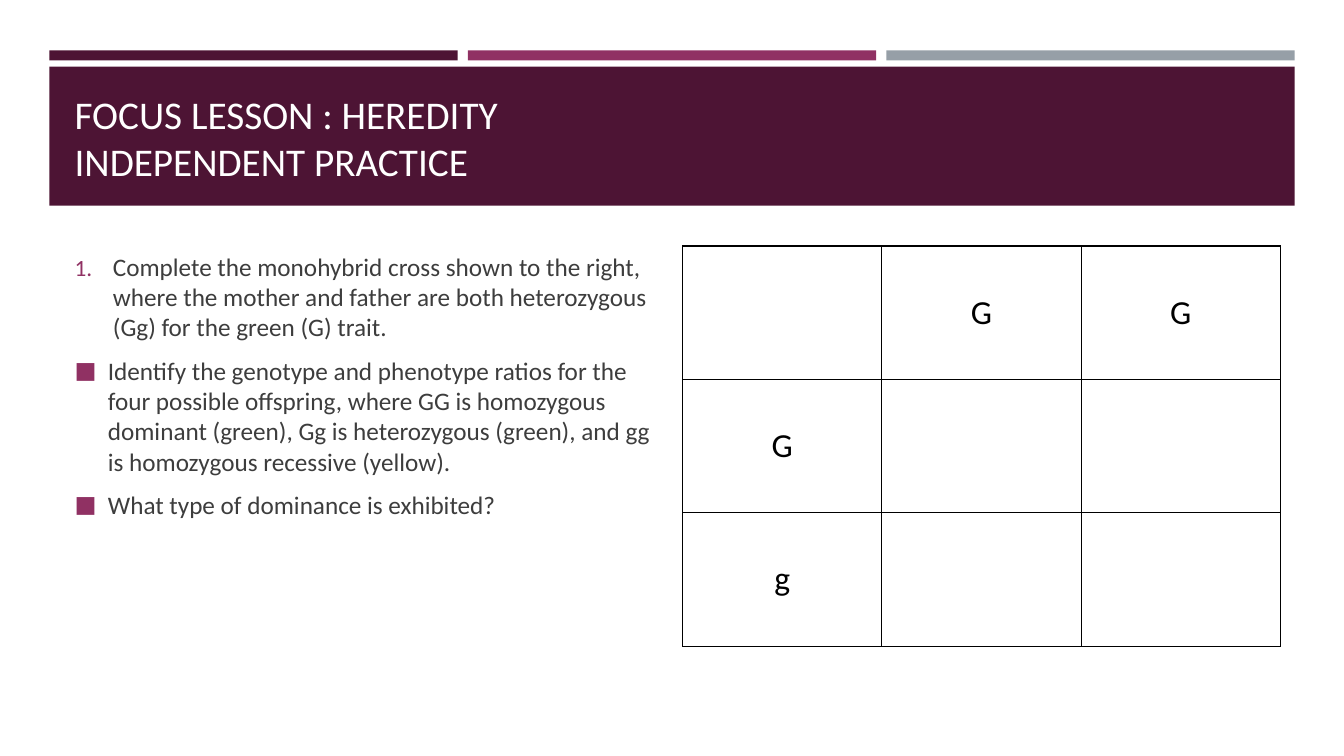
import pptx
import pptx.dml.color
import pptx.enum.shapes
import pptx.enum.text
import pptx.oxml
import pptx.oxml.ns
import pptx.util

# Content
TITLE = "FOCUS LESSON : HEREDITY\vINDEPENDENT PRACTICE"
NUMBERED = ("buAutoNum", "type", "arabicPeriod", 0.38)
SQUARE = ("buChar", "char", "■", 0.33)
TASKS = [
    (NUMBERED, "Complete the monohybrid cross shown to the right, where the mother "
               "and father are both heterozygous (Gg) for the green (G) trait."),
    (SQUARE, "Identify the genotype and phenotype ratios for the four possible "
             "offspring, where GG is homozygous dominant (green), Gg is heterozygous "
             "(green), and gg is homozygous recessive (yellow)."),
    (SQUARE, "What type of dominance is exhibited?"),
]
PUNNETT_SQUARE = [["", "G", "G"], ["G", "", ""], ["g", "", ""]]

# Colours and layout, in inches
PLUM, MAGENTA, GREY = "4D1434", "903163", "969FA7"
WHITE, BLACK, TEXT_COLOUR = "FFFFFF", "000000", "3D3D3D"
WIDTH, HEIGHT = 13.33, 7.5
MARGIN, BAR_WIDTH, BAR_GAP = 0.49, 4.05, 0.1
CONTENT_LEFT, CONTENT_TOP = 0.64, 2.44
COLUMN_WIDTH, COLUMN_HEIGHT, COLUMN_GAP = 5.93, 3.97, 0.2

ANCHOR = pptx.enum.text.MSO_ANCHOR
ALIGN = pptx.enum.text.PP_ALIGN
inches, points = pptx.util.Inches, pptx.util.Pt


def colour(value):
    return pptx.dml.color.RGBColor.from_string(value)


def set_format(target, values):
    for name, value in values.items():
        setattr(target, name, value)


def place(shape, left, top, width, height):
    set_format(shape, {"left": inches(left), "top": inches(top),
                       "width": inches(width), "height": inches(height)})


def set_font(paragraph, size, value):
    set_format(paragraph.font, {"name": "Calibri", "size": points(size), "bold": False})
    paragraph.font.color.rgb = colour(value)


def append_xml(parent, markup):
    parent.append(pptx.oxml.parse_xml(markup.replace(
        " ", " " + pptx.oxml.ns.nsdecls("a") + " ", 1)))


def add_band(left, top, width, height, fill):
    band = slide.shapes.add_shape(
        pptx.enum.shapes.MSO_SHAPE.RECTANGLE,
        inches(left), inches(top), inches(width), inches(height))
    band.shadow.inherit = False
    band.fill.solid()
    band.fill.fore_color.rgb = colour(fill)
    band.line.fill.background()
    # Bands lie behind the placeholders
    slide.shapes._spTree.remove(band._element)
    slide.shapes._spTree.insert(2, band._element)


presentation = pptx.Presentation()
set_format(presentation, {"slide_width": inches(WIDTH), "slide_height": inches(HEIGHT)})
slide = presentation.slides.add_slide(presentation.slide_layouts[1])

# Header bands
for index, fill in enumerate([PLUM, MAGENTA, GREY]):
    add_band(MARGIN + index * (BAR_WIDTH + BAR_GAP), 0.5, BAR_WIDTH, 0.1, fill)
add_band(MARGIN, 0.66, 3 * BAR_WIDTH + 2 * BAR_GAP, 1.38, PLUM)

# Title
title = slide.shapes.title
place(title, CONTENT_LEFT, 0.8, 2 * COLUMN_WIDTH + COLUMN_GAP, 1.08)
title.text_frame.text = TITLE
frame_format = {"word_wrap": True, "auto_size": pptx.enum.text.MSO_AUTO_SIZE.NONE}
set_format(title.text_frame, {**frame_format, "vertical_anchor": ANCHOR.BOTTOM})
title.text_frame.paragraphs[0].alignment = ALIGN.LEFT
set_font(title.text_frame.paragraphs[0], 28, WHITE)

# Task list
body = slide.placeholders[1]
place(body, CONTENT_LEFT, CONTENT_TOP, COLUMN_WIDTH, COLUMN_HEIGHT)
set_format(body.text_frame, {**frame_format, "vertical_anchor": ANCHOR.TOP})
body.text_frame.text = "\n".join(text for _, text in TASKS)
for paragraph, ((tag, attribute, value, indent), _) in zip(body.text_frame.paragraphs, TASKS):
    set_font(paragraph, 18, TEXT_COLOUR)
    set_format(paragraph, {"space_before": points(3.6), "space_after": points(6)})
    properties = paragraph._p.get_or_add_pPr()
    properties.set("marL", str(inches(indent)))
    properties.set("indent", str(-inches(indent)))
    append_xml(properties, f'<a:buClr ><a:srgbClr val="{MAGENTA}"/></a:buClr>')
    append_xml(properties, '<a:buSzPct val="92000"/>')
    append_xml(properties, '<a:buFont typeface="Calibri"/>')
    append_xml(properties, f'<a:{tag} {attribute}="{value}"/>')

# Punnett square
table = slide.shapes.add_table(
    len(PUNNETT_SQUARE), len(PUNNETT_SQUARE[0]),
    inches(CONTENT_LEFT + COLUMN_WIDTH + COLUMN_GAP), inches(CONTENT_TOP),
    inches(COLUMN_WIDTH), inches(COLUMN_HEIGHT)).table
set_format(table, {"first_row": False, "horz_banding": False})
for row, alleles in enumerate(PUNNETT_SQUARE):
    for column, allele in enumerate(alleles):
        cell = table.cell(row, column)
        cell.vertical_anchor = ANCHOR.MIDDLE
        cell.text = allele
        paragraph = cell.text_frame.paragraphs[0]
        paragraph.alignment = ALIGN.CENTER
        set_font(paragraph, 24, BLACK)
        for side in "LRTB":
            append_xml(cell._tc.get_or_add_tcPr(),
                       f'<a:ln{side} w="{points(1)}"><a:solidFill>'
                       f'<a:srgbClr val="{BLACK}"/></a:solidFill></a:ln{side}>')
        cell.fill.background()

presentation.save("out.pptx")
